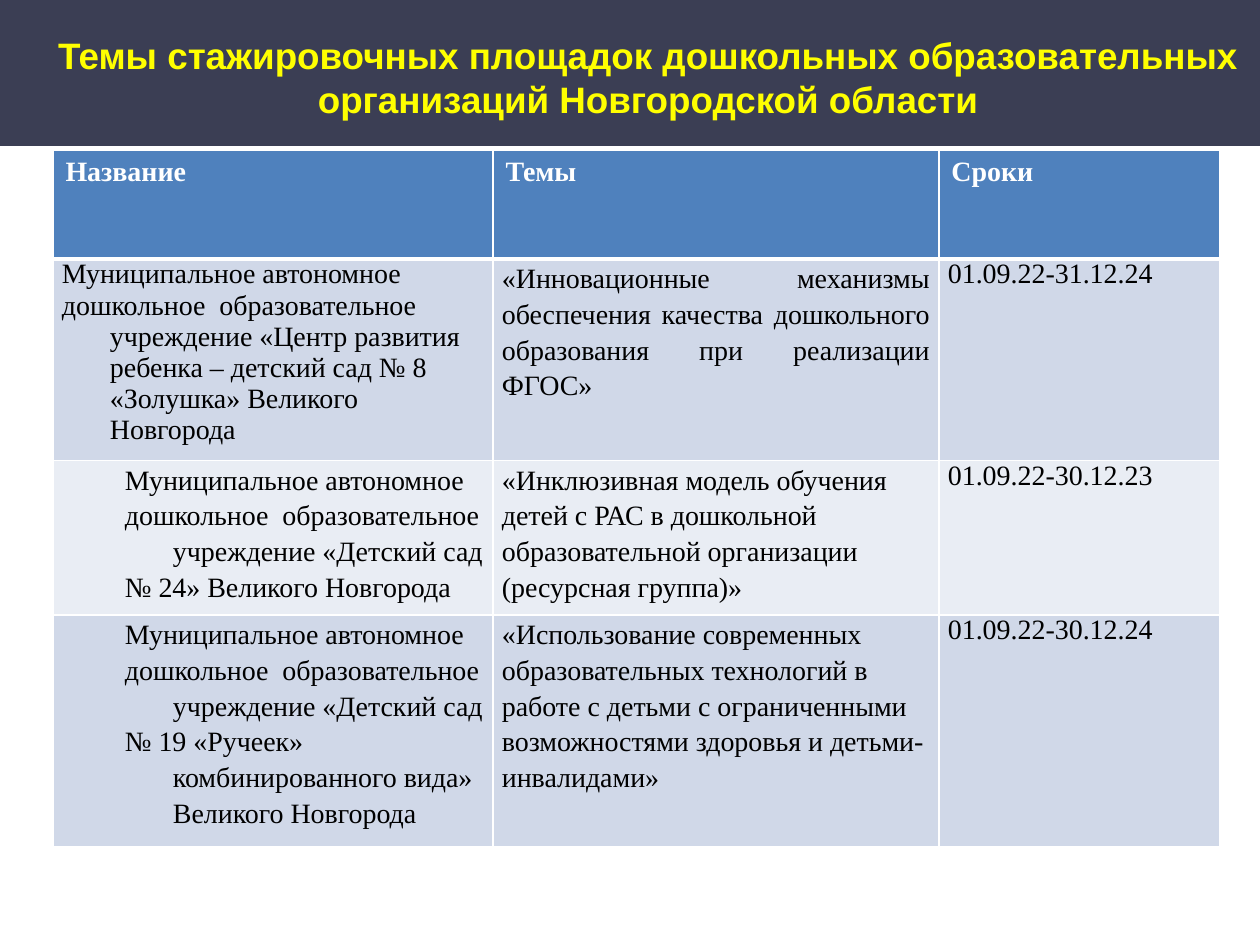
from pptx import Presentation
from pptx.dml.color import RGBColor
from pptx.enum.shapes import MSO_SHAPE as Shape
from pptx.enum.text import PP_ALIGN as Align
from pptx.oxml.ns import qn
from pptx.util import Pt
from lxml.etree import SubElement

PX = 914400 / 126
COLORS = {
    "band": "3B3E54",
    "title": "FFFF00",
    "header": "4F81BD",
    "odd": "D0D8E8",
    "even": "E9EDF4",
    "white": "FFFFFF",
    "text": "000000",
}
TITLE = "Темы стажировочных площадок дошкольных образовательных организаций Новгородской области"
HEADERS = ["Название", "Темы", "Сроки"]
SITES = [
    (
        ["Муниципальное автономное",
         "дошкольное  образовательное учреждение «Центр развития ребенка – детский сад № 8 «Золушка» Великого Новгорода"],
        "«Инновационные механизмы обеспечения качества дошкольного образования при реализации ФГОС»",
        "01.09.22-31.12.24",
    ),
    (
        ["Муниципальное автономное",
         "дошкольное  образовательное учреждение «Детский сад",
         "№ 24» Великого Новгорода"],
        "«Инклюзивная модель обучения детей с РАС в дошкольной образовательной организации (ресурсная группа)»",
        "01.09.22-30.12.23",
    ),
    (
        ["Муниципальное автономное",
         "дошкольное  образовательное учреждение «Детский сад",
         "№ 19 «Ручеек» комбинированного вида» Великого Новгорода"],
        "«Использование современных образовательных технологий в работе с детьми с ограниченными возможностями здоровья и детьми-инвалидами»",
        "01.09.22-30.12.24",
    ),
]
COLUMN_WIDTHS = [440, 446, 281]
ROW_HEIGHTS = [109, 187, 143, 214]
HANGING = 48


def px(value):
    return round(value * PX)


def color(name):
    return RGBColor.from_string(COLORS[name])


def format_runs(paragraph, font_name, size, color_name, bold=False):
    for run in paragraph.runs:
        run.font.name = font_name
        run.font.size = Pt(size)
        run.font.bold = bold
        run.font.color.rgb = color(color_name)


def add_band(slide):
    band = slide.shapes.add_shape(Shape.RECTANGLE, 0, 0, px(1260), px(146))
    band.shadow.inherit = False
    band.fill.solid()
    band.fill.fore_color.rgb = color("band")
    band.line.fill.background()


def add_title(slide):
    box = slide.shapes.add_textbox(px(54), px(33), px(1188), px(90))
    frame = box.text_frame
    frame.word_wrap = True
    frame.margin_left = frame.margin_right = frame.margin_top = frame.margin_bottom = 0
    frame.text = TITLE
    paragraph = frame.paragraphs[0]
    paragraph.alignment = Align.CENTER
    format_runs(paragraph, "Arial", 21, "title", bold=True)


def set_borders(cell, top, bottom):
    properties = cell._tc.get_or_add_tcPr()
    for side, width in zip("LRTB", (1, 1, top, bottom)):
        line = SubElement(properties, qn(f"a:ln{side}"), w=str(Pt(width)))
        fill = SubElement(line, qn("a:solidFill"))
        SubElement(fill, qn("a:srgbClr"), val=COLORS["white"])


def fill_cell(cell, lines, fill, text_color="text", bold=False, spacing=None, indent=0, align=None):
    cell.text_frame.text = "\n".join(lines)
    cell.fill.solid()
    cell.fill.fore_color.rgb = color(fill)
    for paragraph in cell.text_frame.paragraphs:
        paragraph.alignment = align
        paragraph.line_spacing = spacing
        if indent:
            properties = paragraph._p.get_or_add_pPr()
            properties.set("marL", str(px(indent)))
            properties.set("indent", str(-px(HANGING)))
        format_runs(paragraph, "Times New Roman", 16, text_color, bold)


def fill_site_row(cells, site, first):
    names, topic, dates = site
    for cell in cells:
        cell.margin_left = cell.margin_right = px(9)
        cell.margin_top = cell.margin_bottom = 0
    name_cell, topic_cell, dates_cell = cells
    return [
        (name_cell, names, {"spacing": None if first else 1.15, "indent": HANGING if first else 111}),
        (topic_cell, [topic], {"spacing": 1.15, "align": Align.JUSTIFY if first else None}),
        (dates_cell, [dates], {}),
    ]


def add_site_table(slide):
    table = slide.shapes.add_table(
        len(ROW_HEIGHTS), len(COLUMN_WIDTHS), px(53), px(150),
        px(sum(COLUMN_WIDTHS)), px(sum(ROW_HEIGHTS))).table
    for column, width in zip(table.columns, COLUMN_WIDTHS):
        column.width = px(width)
    for index, (row, height) in enumerate(zip(table.rows, ROW_HEIGHTS)):
        row.height = px(height)
        for cell in row.cells:
            set_borders(cell, top=3 if index == 1 else 1, bottom=3 if index == 0 else 1)
    for cell, header in zip(table.rows[0].cells, HEADERS):
        fill_cell(cell, [header], "header", "white", bold=True)
    for index, site in enumerate(SITES, 1):
        fill = "odd" if index % 2 else "even"
        for cell, lines, style in fill_site_row(list(table.rows[index].cells), site, index == 1):
            fill_cell(cell, lines, fill, **style)


def main():
    presentation = Presentation()
    presentation.slide_width = px(1260)
    presentation.slide_height = px(945)
    slide = presentation.slides.add_slide(presentation.slide_layouts[6])
    add_band(slide)
    add_title(slide)
    add_site_table(slide)
    presentation.save("out.pptx")


if __name__ == "__main__":
    main()
